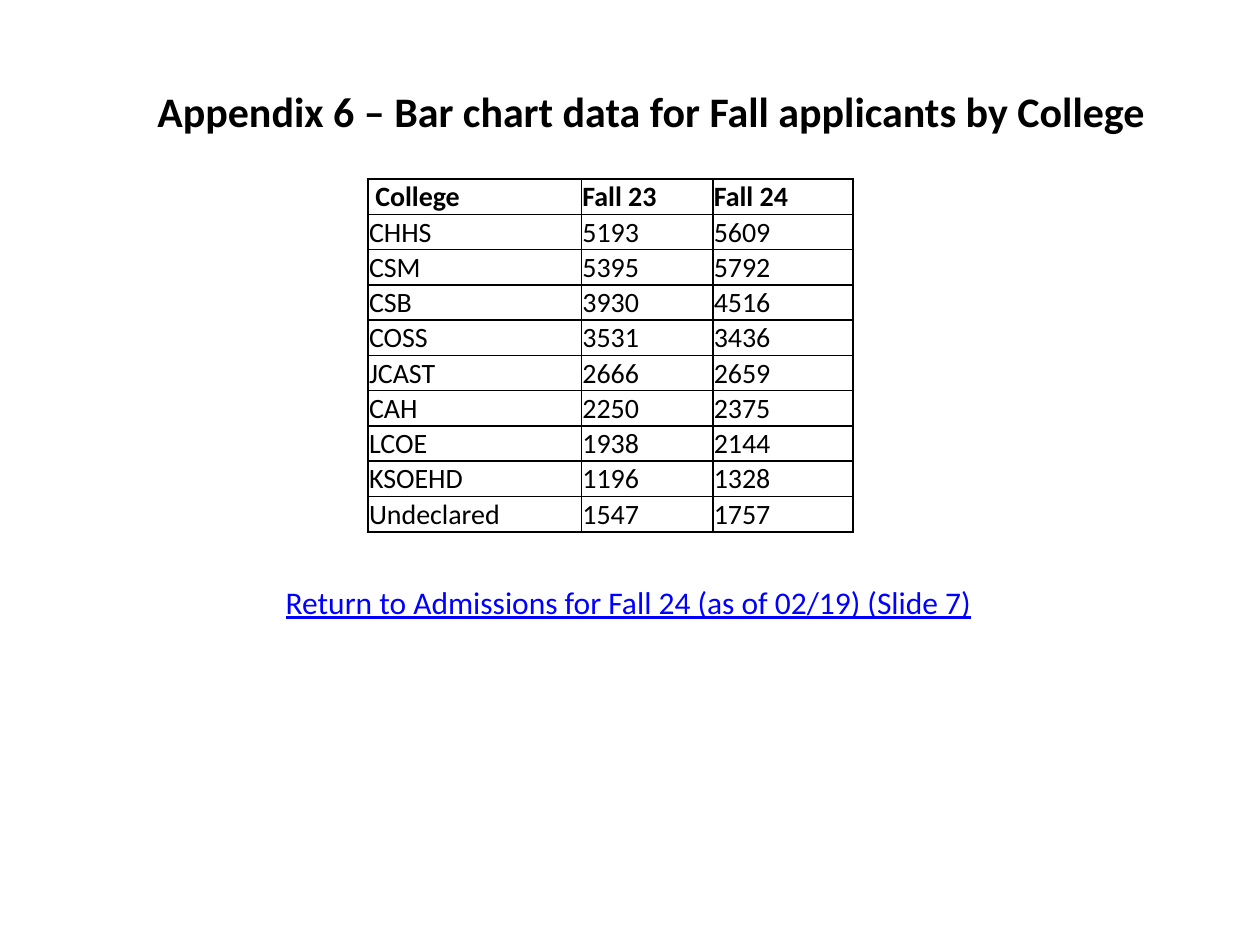
from lxml.etree import SubElement
from pptx import Presentation
from pptx.dml.color import RGBColor
from pptx.enum.text import MSO_ANCHOR, MSO_AUTO_SIZE, PP_ALIGN
from pptx.oxml.ns import qn
from pptx.util import Cm, Pt

COLORS = {"text": "000000", "border": "000000", "link": "0000FF"}

APPLICANTS = [
    (" College", "Fall 23", "Fall 24"),
    ("CHHS", "5193", "5609"),
    ("CSM", "5395", "5792"),
    ("CSB", "3930", "4516"),
    ("COSS", "3531", "3436"),
    ("JCAST", "2666", "2659"),
    ("CAH", "2250", "2375"),
    ("LCOE", "1938", "2144"),
    ("KSOEHD", "1196", "1328"),
    ("Undeclared", "1547", "1757"),
]
COLUMN_WIDTHS = [Cm(4.3), Cm(2.65), Cm(2.83)]
ROW_HEIGHT = Cm(0.7)


def write_text(frame, text, size=16, color="text", bold=False,
               underline=False, align=PP_ALIGN.LEFT):
    paragraph = frame.paragraphs[0]
    paragraph.alignment = align
    run = paragraph.add_run()
    run.text = text
    run.font.name = "Calibri"
    run.font.size = Pt(size)
    run.font.bold = bold
    run.font.underline = underline
    run.font.color.rgb = RGBColor.from_string(COLORS[color])


def add_borders(cell):
    properties = cell._tc.get_or_add_tcPr()
    for side in ("a:lnL", "a:lnR", "a:lnT", "a:lnB"):
        line = SubElement(properties, qn(side), w=str(Pt(1)))
        fill = SubElement(line, qn("a:solidFill"))
        SubElement(fill, qn("a:srgbClr"), val=COLORS["border"])


prs = Presentation()
prs.slide_width, prs.slide_height = Cm(25.4), Cm(19.05)
slide = prs.slides.add_slide(prs.slide_layouts[5])

# Title
title = slide.shapes.title
title.left, title.top, title.width, title.height = Cm(1.7), Cm(1.07), Cm(22.86), Cm(2.34)
title_frame = title.text_frame
title_frame.word_wrap = True
title_frame.auto_size = MSO_AUTO_SIZE.NONE
title_frame.vertical_anchor = MSO_ANCHOR.MIDDLE
title_frame.margin_left = title_frame.margin_right = 0
write_text(title_frame, "Appendix 6 – Bar chart data for Fall applicants by College",
           size=24, bold=True, align=PP_ALIGN.CENTER)

# Applicants by college
table = slide.shapes.add_table(
    len(APPLICANTS), len(COLUMN_WIDTHS), Cm(7.42), Cm(3.61),
    sum(COLUMN_WIDTHS), ROW_HEIGHT * len(APPLICANTS)).table
table.horz_banding = False
for column, width in zip(table.columns, COLUMN_WIDTHS):
    column.width = width
for row_index, values in enumerate(APPLICANTS):
    table.rows[row_index].height = ROW_HEIGHT
    for column_index, value in enumerate(values):
        cell = table.cell(row_index, column_index)
        cell.margin_left = cell.margin_right = cell.margin_top = Cm(0.02)
        cell.margin_bottom = 0
        is_number = row_index > 0 and column_index > 0
        cell.vertical_anchor = MSO_ANCHOR.BOTTOM if is_number else MSO_ANCHOR.TOP
        add_borders(cell)
        cell.fill.background()
        write_text(cell.text_frame, value, bold=row_index == 0)

# Return line
return_line = slide.shapes.add_textbox(Cm(5.51), Cm(11.63), Cm(19.89), Cm(1.07))
return_line.text_frame.word_wrap = True
return_line.text_frame.auto_size = MSO_AUTO_SIZE.SHAPE_TO_FIT_TEXT
write_text(return_line.text_frame, "Return to Admissions for Fall 24 (as of 02/19) (Slide 7)",
           size=18, color="link", underline=True)

prs.save("out.pptx")
